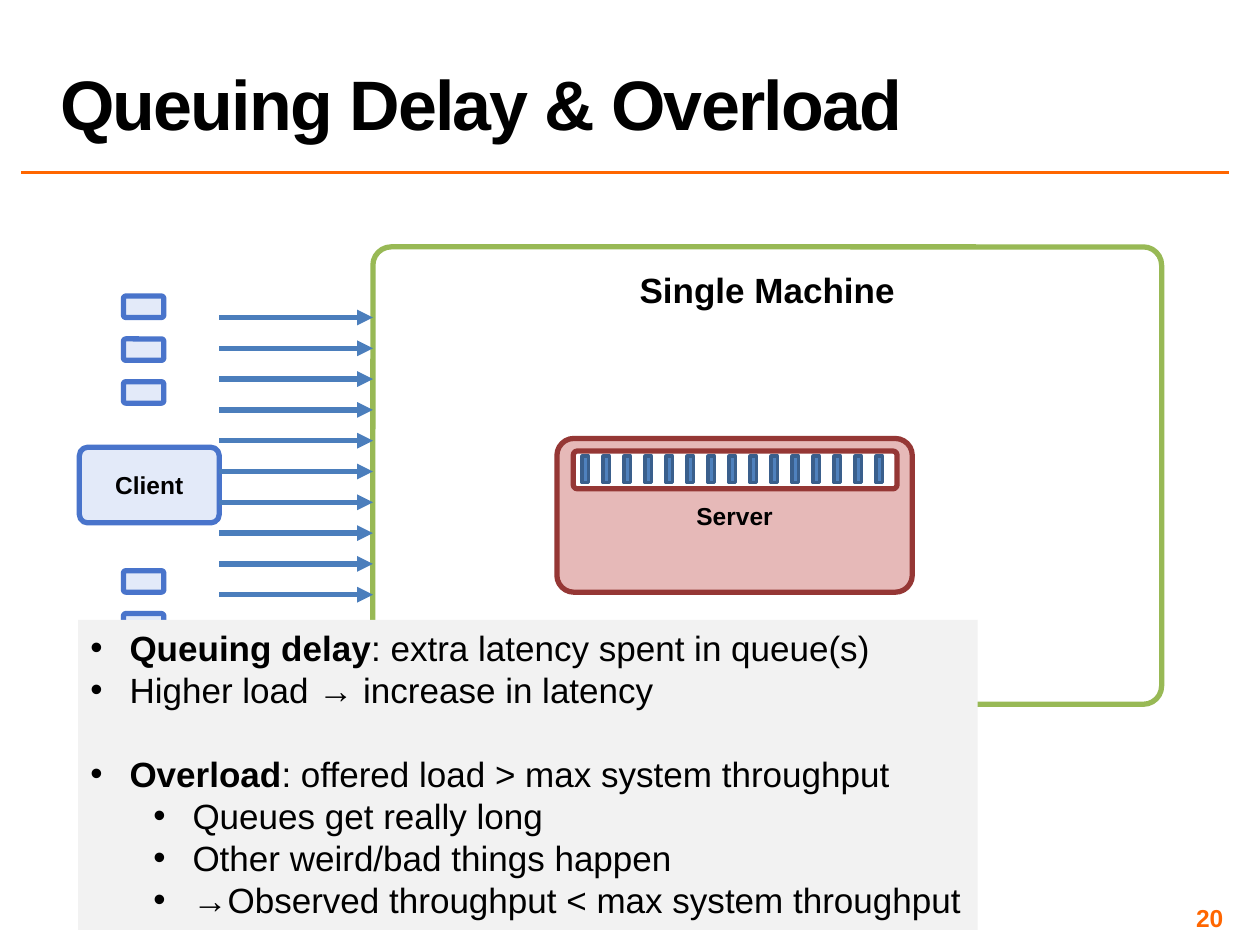
"""Build the slide on queuing delay and overload."""
from lxml import etree
from pptx import Presentation
from pptx.dml.color import RGBColor
from pptx.enum.shapes import MSO_CONNECTOR, MSO_SHAPE
from pptx.enum.text import MSO_ANCHOR, PP_ALIGN
from pptx.oxml.ns import qn
from pptx.util import Inches, Pt

RECT, ROUND = MSO_SHAPE.RECTANGLE, MSO_SHAPE.ROUNDED_RECTANGLE
STRAIGHT = MSO_CONNECTOR.STRAIGHT
TOP, MIDDLE, BOTTOM = MSO_ANCHOR.TOP, MSO_ANCHOR.MIDDLE, MSO_ANCHOR.BOTTOM
LEFT, CENTER, RIGHT = PP_ALIGN.LEFT, PP_ALIGN.CENTER, PP_ALIGN.RIGHT
BLACK = RGBColor(0x00, 0x00, 0x00)
WHITE = RGBColor(0xFF, 0xFF, 0xFF)
ORANGE = RGBColor(0xFF, 0x66, 0x00)
PALE_BLUE = RGBColor(0xE3, 0xEA, 0xF9)
BLUE = RGBColor(0x49, 0x74, 0xCB)
ARROW_BLUE = RGBColor(0x4B, 0x7E, 0xBC)
BAR_BLUE = RGBColor(0x4F, 0x81, 0xBD)
BAR_EDGE = RGBColor(0x3A, 0x5F, 0x8C)
GREEN = RGBColor(0x98, 0xB9, 0x55)
PINK = RGBColor(0xE6, 0xB9, 0xB8)
RED = RGBColor(0x95, 0x37, 0x35)
GRAY = RGBColor(0xF2, 0xF2, 0xF2)

prs = Presentation()
prs.slide_width, prs.slide_height = Inches(10), Inches(7.5)
s = prs.slides.add_slide(prs.slide_layouts[6])


def add_box(kind, x, y, w, h, fill=None, line=None, width=3, adj=0.11):
    sp = s.shapes.add_shape(kind, Inches(x), Inches(y), Inches(w), Inches(h))
    sp.shadow.inherit = False
    if kind == ROUND:
        sp.adjustments[0] = adj
    if fill is None:
        sp.fill.background()
    else:
        sp.fill.solid()
        sp.fill.fore_color.rgb = fill
    if line is None:
        sp.line.fill.background()
    else:
        sp.line.color.rgb = line
        sp.line.width = Pt(width)
    return sp


def add_text(p, text, size=20, bold=False, color=BLACK, align=LEFT, anchor=None, tf=None):
    if tf is not None:
        tf.word_wrap = True
        tf.vertical_anchor = anchor
    p.alignment = align
    r = p.add_run()
    r.text = text
    r.font.name, r.font.size, r.font.bold = "Arial", Pt(size), bold
    r.font.color.rgb = color
    return r


rule = s.shapes.add_connector(STRAIGHT, Inches(0.17), Inches(1.37), Inches(9.75), Inches(1.37))
rule.line.color.rgb = ORANGE
rule.line.width = Pt(2)
etree.SubElement(rule.line._get_or_add_ln().getparent(), qn("a:effectLst"))

tf = s.shapes.add_textbox(Inches(0.38), Inches(0.02), Inches(9.37), Inches(1.17)).text_frame
p = tf.paragraphs[0]
p.line_spacing = 0.8
r = add_text(p, "Queuing Delay & Overload", size=40, bold=True, anchor=BOTTOM, tf=tf)
r.font._element.set("spc", "-100")

client = add_box(ROUND, 0.63, 3.55, 1.11, 0.6, PALE_BLUE, BLUE)
tf = client.text_frame
add_text(tf.paragraphs[0], "Client", size=14, bold=True, align=CENTER, anchor=MIDDLE, tf=tf)

for top, count in ((2.35, 3), (4.53, 2)):
    for i in range(count):
        add_box(ROUND, 0.98, top + 0.34 * i, 0.32, 0.17, PALE_BLUE, BLUE)

machine = add_box(ROUND, 2.96, 1.96, 6.26, 3.63, line=GREEN, adj=0.04)
tf = machine.text_frame
tf.margin_top = Inches(0.13)
add_text(tf.paragraphs[0], "Single Machine", bold=True, align=CENTER, anchor=TOP, tf=tf)

server = add_box(ROUND, 4.42, 3.48, 2.82, 1.22, PINK, RED)
tf = server.text_frame
add_text(tf.paragraphs[0], "Server", size=14, bold=True, align=CENTER, anchor=MIDDLE, tf=tf)

for i in range(10):
    y = Inches(2.52 + 2.2 * i / 9)
    arrow = s.shapes.add_connector(STRAIGHT, Inches(1.74), y, Inches(2.96), y)
    arrow.line.color.rgb = ARROW_BLUE
    arrow.line.width = Pt(3)
    ln = arrow.line._get_or_add_ln()
    etree.SubElement(ln, qn("a:tailEnd"), type="triangle")
    etree.SubElement(ln.getparent(), qn("a:effectLst"))

add_box(ROUND, 4.55, 3.58, 2.57, 0.3, WHITE, RED)
for i in range(15):
    add_box(RECT, 4.62 + i / 6, 3.62, 0.05, 0.21, BAR_BLUE, BAR_EDGE, width=2)

BULLETS = [
    (0, "Queuing delay", ": extra latency spent in queue(s)", 0),
    (0, "", "Higher load → increase in latency", 0),
    (0, "Overload", ": offered load > max system throughput", 24),
    (1, "", "Queues get really long", 0),
    (1, "", "Other weird/bad things happen", 0),
    (1, "", "→Observed throughput < max system throughput", 0),
]
tf = add_box(RECT, 0.62, 4.92, 7.14, 2.46, GRAY).text_frame
for i, (level, term, text, before) in enumerate(BULLETS):
    p = tf.add_paragraph() if i else tf.paragraphs[0]
    p.level = level
    p.line_spacing, p.space_before = Pt(24), Pt(before)
    if term:
        add_text(p, term, bold=True)
    add_text(p, text, anchor=TOP, tf=tf)
    pPr = p._p.get_or_add_pPr()
    pPr.set("marL", str(Inches(0.31 + 0.5 * level)))
    pPr.set("indent", str(Inches(-0.31)))
    etree.SubElement(pPr, qn("a:buFont"), typeface="Arial")
    etree.SubElement(pPr, qn("a:buChar"), char="•")

tf = s.shapes.add_textbox(Inches(7.42), Inches(7.17), Inches(2.33), Inches(0.23)).text_frame
tf.margin_left = tf.margin_right = tf.margin_top = tf.margin_bottom = Inches(0.04)
add_text(tf.paragraphs[0], "20", size=14, bold=True, color=ORANGE, align=RIGHT, anchor=MIDDLE, tf=tf)

prs.save("out.pptx")
